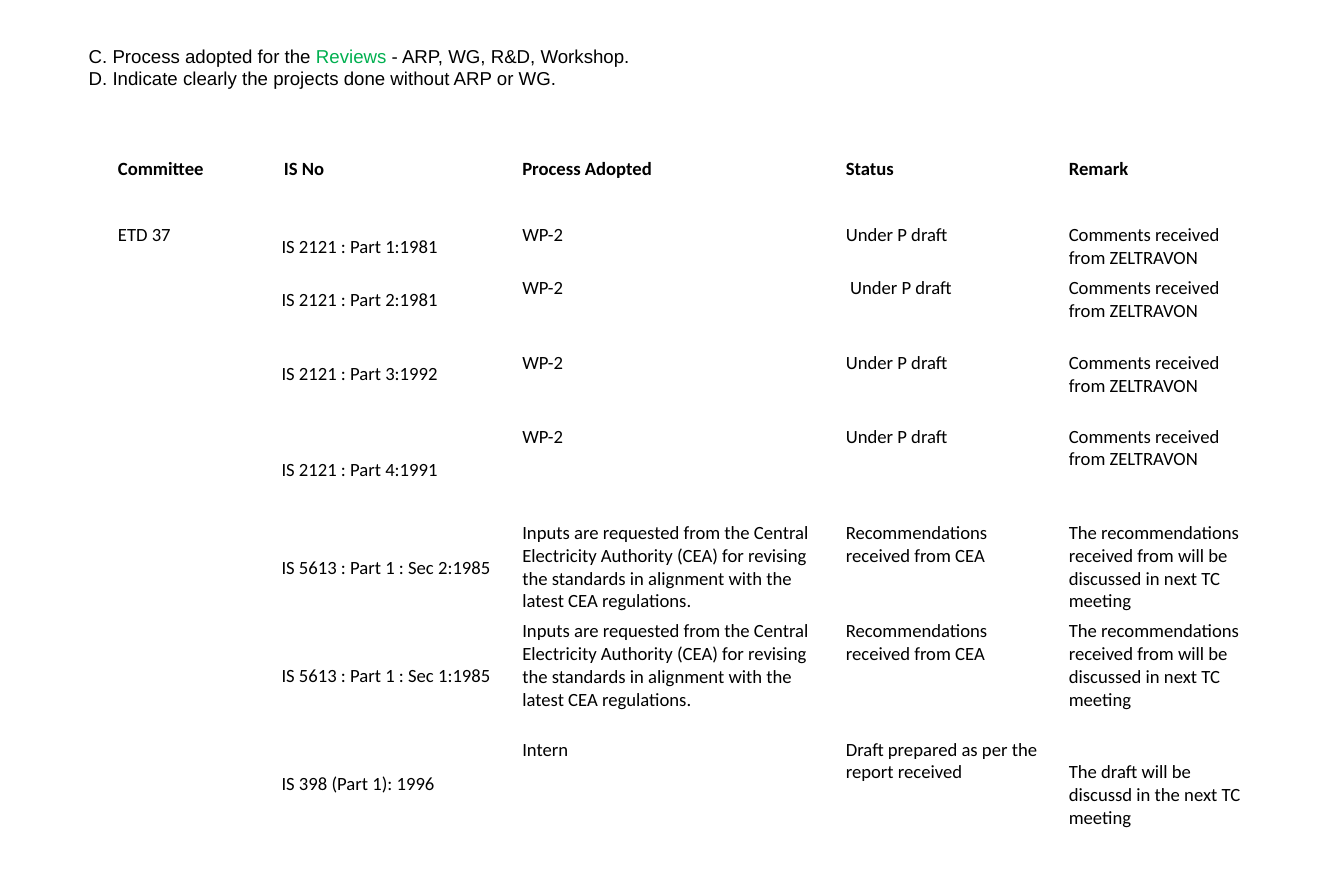
from dataclasses import dataclass

import pptx
import pptx.dml.color
import pptx.enum.text
import pptx.util

Pt = pptx.util.Pt


@dataclass(frozen=True)
class Theme:
    """Colours, fonts and type size of the slide."""
    ink: str = "000000"
    accent: str = "00B050"
    heading_font: str = "Arial"
    table_font: str = "Calibri"
    size: int = 18


THEME = Theme()

HEADING = [
    [("C. Process adopted for the ", THEME.ink), ("Reviews ", THEME.accent),
     ("- ARP, WG, R&D, Workshop.", THEME.ink)],
    [("D. Indicate clearly the projects done without ARP or WG.", THEME.ink)],
]

COLUMN_WIDTHS = [160, 230, 312, 215, 191]
ROW_HEIGHTS = [64, 51, 72, 71, 93, 95, 114, 94]
TITLES = ["Committee", "IS No", "Process Adopted", "Status", "Remark"]
COMMENTS = "Comments received from ZELTRAVON"
INPUTS = ("Inputs are requested from the Central Electricity Authority (CEA) for revising "
          "the standards in alignment with the latest CEA regulations.")
RECEIVED = "Recommendations received from CEA"
DISCUSSION = "The recommendations received from will be discussed in next TC meeting"
STANDARDS = [
    ["ETD 37", "IS 2121 : Part 1:1981", "WP-2", "Under P draft", COMMENTS],
    ["", "IS 2121 : Part 2:1981", "WP-2", " Under P draft", COMMENTS],
    ["", "IS 2121 : Part 3:1992", "WP-2", "Under P draft", COMMENTS],
    ["", "IS 2121 : Part 4:1991", "WP-2", "Under P draft", COMMENTS],
    ["", "IS 5613 : Part 1 : Sec 2:1985", INPUTS, RECEIVED, DISCUSSION],
    ["", "IS 5613 : Part 1 : Sec 1:1985", INPUTS, RECEIVED, DISCUSSION],
    ["", "IS 398 (Part 1): 1996", "Intern", "Draft prepared as per the report received",
     "The draft will be discussd in the next TC meeting"],
]
RAISED_ROWS = (2, 3)
LINE_HEIGHT = 22


def add_run(paragraph, text, font, color, bold=False):
    """Append one styled run to a paragraph."""
    run = paragraph.add_run()
    run.text = text
    run.font.name = font
    run.font.size = Pt(THEME.size)
    run.font.bold = bold
    run.font.color.rgb = pptx.dml.color.RGBColor.from_string(color)


def add_heading(slide, left, top, width, height):
    """Place the two lettered instructions in the given box."""
    heading = slide.shapes.add_textbox(Pt(left), Pt(top), Pt(width), Pt(height)).text_frame
    heading.word_wrap = True
    heading.auto_size = pptx.enum.text.MSO_AUTO_SIZE.SHAPE_TO_FIT_TEXT
    for index, instruction in enumerate(HEADING):
        paragraph = heading.add_paragraph() if index else heading.paragraphs[0]
        for text, color in instruction:
            add_run(paragraph, text, THEME.heading_font, color)


def style_standard_number(cell, raised):
    """Centre a standard number in its row, lifted by half a line if raised."""
    cell.vertical_anchor = pptx.enum.text.MSO_ANCHOR.MIDDLE
    cell.margin_left = cell.margin_right = Pt(5)
    cell.margin_top = Pt(0)
    cell.margin_bottom = Pt(LINE_HEIGHT if raised else 0)
    cell.text_frame.paragraphs[0].line_spacing = 1.07


def add_review_table(slide, left, top, width, height):
    """Place the table of standards under review in the given box."""
    rows = [TITLES] + STANDARDS
    reviews = slide.shapes.add_table(
        len(rows), len(TITLES), Pt(left), Pt(top), Pt(width), Pt(height)).table
    reviews.first_row = reviews.horz_banding = False
    for column, share in zip(reviews.columns, COLUMN_WIDTHS):
        column.width = Pt(width * share / sum(COLUMN_WIDTHS))
    for row, share in zip(reviews.rows, ROW_HEIGHTS):
        row.height = Pt(height * share / sum(ROW_HEIGHTS))
    for r, texts in enumerate(rows):
        for c, text in enumerate(texts):
            cell = reviews.cell(r, c)
            cell.fill.background()
            if text:
                add_run(cell.text_frame.paragraphs[0], text, THEME.table_font,
                        THEME.ink, bold=r == 0)
            if r and c == 1:
                style_standard_number(cell, r in RAISED_ROWS)
    reviews.cell(1, 0).merge(reviews.cell(6, 0))
    reviews.cell(7, 4).margin_top = Pt(3.6 + LINE_HEIGHT)


def main():
    """Build the slide and save it."""
    deck = pptx.Presentation()
    deck.slide_width, deck.slide_height = Pt(1296), Pt(864)
    slide = deck.slides.add_slide(deck.slide_layouts[6])
    add_heading(slide, 78.5, 39.5, 648, 51)
    add_review_table(slide, 106.5, 148.5, sum(COLUMN_WIDTHS), sum(ROW_HEIGHTS))
    deck.save("out.pptx")


if __name__ == "__main__":
    main()
